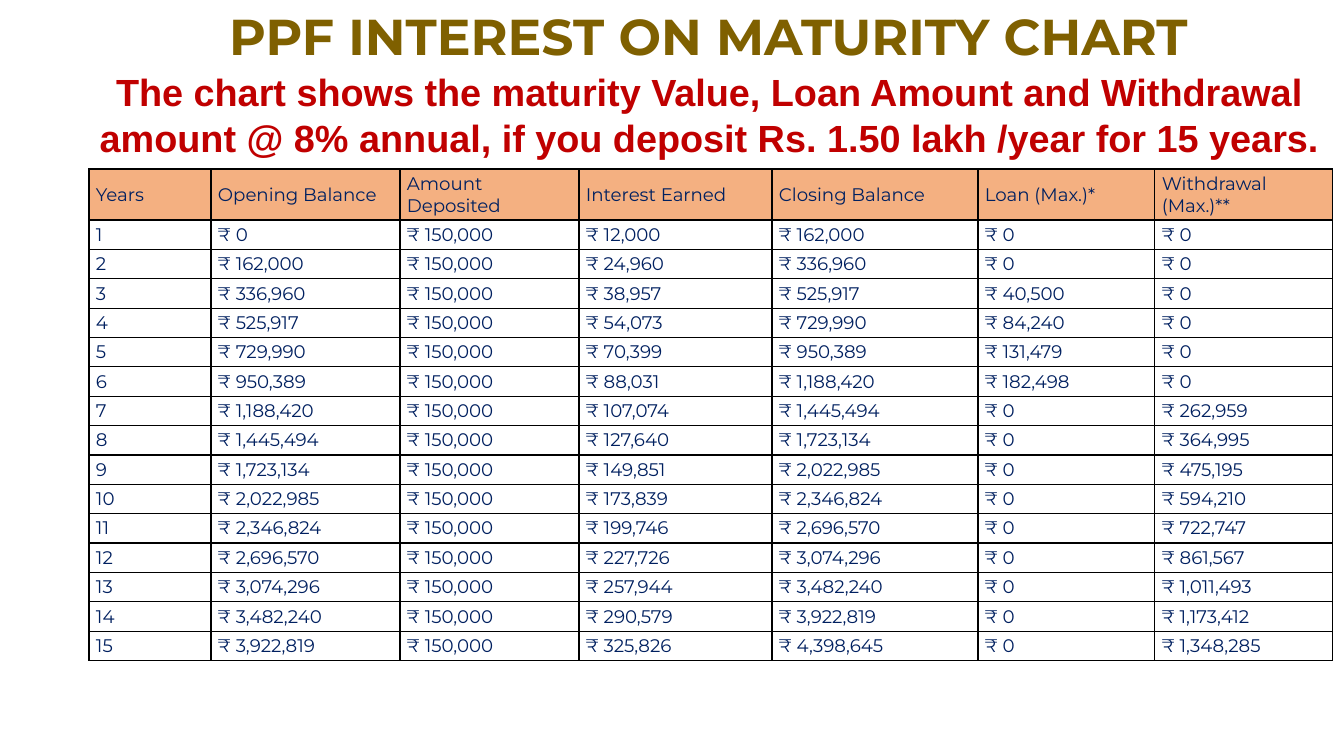
"""Build a slide that tabulates PPF interest, loans and withdrawals over fifteen years."""
from typing import NamedTuple

from lxml.etree import SubElement
from pptx import Presentation
from pptx.dml.color import RGBColor
from pptx.enum.text import MSO_ANCHOR as Anchor, MSO_AUTO_SIZE as AutoSize, PP_ALIGN as Align
from pptx.oxml.ns import qn
from pptx.util import Emu, Pt

EMU_PER_PX = 914400 / 100.8
GOLD = RGBColor(0x7F, 0x60, 0x00)
RED = RGBColor(0xC0, 0x00, 0x00)
NAVY = RGBColor(0x00, 0x20, 0x60)
PEACH = RGBColor(0xF4, 0xB0, 0x81)
BLACK = RGBColor(0x00, 0x00, 0x00)

DEPOSIT = 150_000
HEADER_HEIGHT, YEARS_HEIGHT = 51, 441


class Column(NamedTuple):
    heading: str
    width: int


class Year(NamedTuple):
    interest: int
    loan: int
    withdrawal: int


class Style(NamedTuple):
    font: str
    size: int
    color: RGBColor
    bold: bool


class Box(NamedTuple):
    left: int
    top: int
    width: int
    height: int


COLUMNS = [
    Column("Years", 122),
    Column("Opening Balance", 189),
    Column("Amount Deposited", 179),
    Column("Interest Earned", 193),
    Column("Closing Balance", 206),
    Column("Loan (Max.)*", 177),
    Column("Withdrawal (Max.)**", 178),
]
YEARS = [
    Year(12_000, 0, 0),
    Year(24_960, 0, 0),
    Year(38_957, 40_500, 0),
    Year(54_073, 84_240, 0),
    Year(70_399, 131_479, 0),
    Year(88_031, 182_498, 0),
    Year(107_074, 0, 262_959),
    Year(127_640, 0, 364_995),
    Year(149_851, 0, 475_195),
    Year(173_839, 0, 594_210),
    Year(199_746, 0, 722_747),
    Year(227_726, 0, 861_567),
    Year(257_944, 0, 1_011_493),
    Year(290_579, 0, 1_173_412),
    Year(325_826, 0, 1_348_285),
]
TITLE_STYLE = Style("Montserrat", 36, GOLD, True)
SUMMARY_STYLE = Style("Arial", 27, RED, True)
CELL_STYLE = Style("Montserrat", 13, NAVY, False)


def px(length: float) -> Emu:
    return Emu(round(length * EMU_PER_PX))


def write(paragraph, text: str, style: Style) -> None:
    run = paragraph.add_run()
    run.text = text
    run.font.name = style.font
    run.font.size = Pt(style.size)
    run.font.color.rgb = style.color
    run.font.bold = style.bold


def fill_heading(heading, box: Box, text: str, style: Style) -> None:
    heading.left, heading.top, heading.width, heading.height = map(px, box)
    frame = heading.text_frame
    frame.word_wrap = True
    frame.auto_size = AutoSize.NONE
    frame.vertical_anchor = Anchor.TOP
    frame.paragraphs[0].alignment = Align.CENTER
    write(frame.paragraphs[0], text, style)


def add_borders(cell) -> None:
    properties = cell._tc.get_or_add_tcPr()
    for side in ("a:lnL", "a:lnR", "a:lnT", "a:lnB"):
        border = SubElement(properties, qn(side), w=str(Pt(1)))
        solid = SubElement(border, qn("a:solidFill"))
        SubElement(solid, qn("a:srgbClr"), val=str(BLACK))


def fill_cell(cell, text: str, is_header: bool) -> None:
    add_borders(cell)
    if is_header:
        cell.fill.solid()
        cell.fill.fore_color.rgb = PEACH
    else:
        cell.fill.background()
    cell.vertical_anchor = Anchor.MIDDLE
    cell.margin_left = cell.margin_right = px(7)
    cell.margin_top = cell.margin_bottom = px(3)
    write(cell.text_frame.paragraphs[0], text, CELL_STYLE)


def balance_rows() -> list[list[str]]:
    rows = [[column.heading for column in COLUMNS]]
    opening = 0
    for number, year in enumerate(YEARS, start=1):
        closing = opening + DEPOSIT + year.interest
        amounts = (opening, DEPOSIT, year.interest, closing, year.loan, year.withdrawal)
        rows.append([str(number)] + [f"₹ {amount:,}" for amount in amounts])
        opening = closing
    return rows


def add_balances(slide, left: int, top: int) -> None:
    rows = balance_rows()
    width = sum(column.width for column in COLUMNS)
    box = Box(left, top, width, HEADER_HEIGHT + YEARS_HEIGHT)
    balances = slide.shapes.add_table(len(rows), len(COLUMNS), *map(px, box)).table
    balances.first_row = balances.horz_banding = False
    for grid_column, column in zip(balances.columns, COLUMNS):
        grid_column.width = px(column.width)
    for index, (grid_row, texts) in enumerate(zip(balances.rows, rows)):
        grid_row.height = px(YEARS_HEIGHT / len(YEARS) if index else HEADER_HEIGHT)
        for cell, text in zip(grid_row.cells, texts):
            fill_cell(cell, text, is_header=index == 0)


def main() -> None:
    deck = Presentation()
    deck.slide_width, deck.slide_height = px(1344), px(756)
    slide = deck.slides.add_slide(deck.slide_layouts[5])
    add_balances(slide, left=89, top=169)
    fill_heading(slide.shapes.title, Box(73, 0, 1271, 72),
                 "PPF INTEREST ON MATURITY CHART", TITLE_STYLE)
    summary_box = Box(89, 64, 1241, 102)
    summary = slide.shapes.add_textbox(*map(px, summary_box))
    fill_heading(summary, summary_box,
                 "The chart shows the maturity Value, Loan Amount and Withdrawal amount "
                 "@ 8% annual, if you deposit Rs. 1.50 lakh /year for 15 years.", SUMMARY_STYLE)
    deck.save("out.pptx")


if __name__ == "__main__":
    main()
